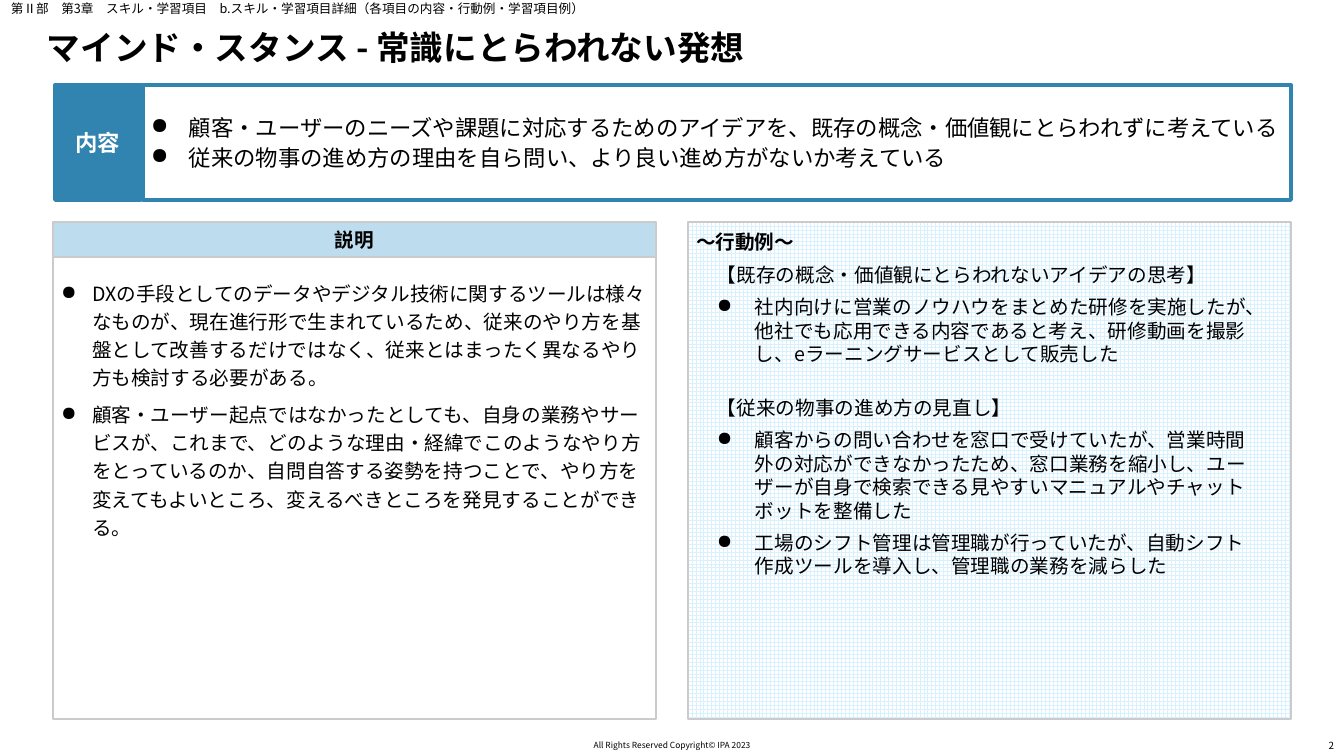
from lxml import etree
from pptx import Presentation
from pptx.dml.color import RGBColor
from pptx.enum.dml import MSO_PATTERN
from pptx.enum.shapes import MSO_SHAPE
from pptx.enum.text import MSO_ANCHOR, PP_ALIGN
from pptx.oxml.ns import qn
from pptx.util import Pt

RECT = MSO_SHAPE.RECTANGLE
GRID = MSO_PATTERN.LARGE_GRID
TOP, MID, LOW = MSO_ANCHOR.TOP, MSO_ANCHOR.MIDDLE, MSO_ANCHOR.BOTTOM
LEFT, MID_X, RIGHT = PP_ALIGN.LEFT, PP_ALIGN.CENTER, PP_ALIGN.RIGHT

FONT = "Noto Sans CJK JP"
BLUE, PALE, GRAY, ICE = "3084AF", "BDDCED", "CBCBCB", "D9F1FF"
BLACK, WHITE = "000000", "FFFFFF"

CHAPTER = "第Ⅱ部　第3章　スキル・学習項目　b.スキル・学習項目詳細（各項目の内容・行動例・学習項目例）"
TITLE = "マインド・スタンス - 常識にとらわれない発想"
CONTENT = [
    "顧客・ユーザーのニーズや課題に対応するためのアイデアを、既存の概念・価値観にとらわれずに考えている",
    "従来の物事の進め方の理由を自ら問い、より良い進め方がないか考えている",
]
REASONS = [
    "DXの手段としてのデータやデジタル技術に関するツールは様々なものが、現在進行形で生まれているため、"
    "従来のやり方を基盤として改善するだけではなく、従来とはまったく異なるやり方も検討する必要がある。",
    "顧客・ユーザー起点ではなかったとしても、自身の業務やサービスが、これまで、どのような理由・経緯で"
    "このようなやり方をとっているのか、自問自答する姿勢を持つことで、やり方を変えてもよいところ、"
    "変えるべきところを発見することができる。",
]
ACTIONS = [
    ("【既存の概念・価値観にとらわれないアイデアの思考】", [
        "社内向けに営業のノウハウをまとめた研修を実施したが、他社でも応用できる内容であると考え、"
        "研修動画を撮影し、eラーニングサービスとして販売した",
    ]),
    ("【従来の物事の進め方の見直し】", [
        "顧客からの問い合わせを窓口で受けていたが、営業時間外の対応ができなかったため、窓口業務を縮小し、"
        "ユーザーが自身で検索できる見やすいマニュアルやチャットボットを整備した",
        "工場のシフト管理は管理職が行っていたが、自動シフト作成ツールを導入し、管理職の業務を減らした",
    ]),
]
NOTICE, PAGE = "All Rights Reserved Copyright© IPA 2023", "2"

WIDE, HIGH = 1344, 756
SCALE = 914400 / 100.8


def px(n):
    return round(n * SCALE)


def color(code):
    return RGBColor.from_string(code)


def style(para, size, ink=BLACK, bold=False, align=LEFT, before=0, line=None, hang=0):
    """Format one paragraph; hang is the bullet indent in px, 0 for no bullet."""
    props = para._p.get_or_add_pPr()
    if hang:
        props.set("marL", str(px(hang)))
        props.set("indent", str(-px(hang)))
        etree.SubElement(props, qn("a:buChar")).set("char", "●")
    para.alignment = align
    para.space_before = Pt(before)
    if line:
        para.line_spacing = line
    font = para.font
    font.size, font.bold, font.name = Pt(size), bold, FONT
    font.color.rgb = color(ink)
    etree.SubElement(font._element, qn("a:ea")).set("typeface", FONT)


def write(shape, lines, size, anchor=TOP, pad=(0, 0, 0, 0), gap=0, **look):
    """Fill a shape with lines, each a text or a (text, own look) pair."""
    frame = shape.text_frame
    frame.word_wrap = True
    frame.vertical_anchor = anchor
    (frame.margin_left, frame.margin_top,
     frame.margin_right, frame.margin_bottom) = map(px, pad)
    for i, item in enumerate(lines):
        text, own = (item, {}) if isinstance(item, str) else item
        para = frame.paragraphs[0] if i == 0 else frame.add_paragraph()
        para.text = text
        style(para, size, **{"before": gap if i else 0, **look, **own})


def panel(slide, box, edge, weight, fill=None):
    shape = slide.shapes.add_shape(RECT, *map(px, box))
    shape.shadow.inherit = False
    shape.line.color.rgb = color(edge)
    shape.line.width = Pt(weight)
    if fill:
        shape.fill.solid()
        shape.fill.fore_color.rgb = color(fill)
    else:
        shape.fill.background()
    return shape


def label(slide, box, text, size, anchor, **look):
    shape = slide.shapes.add_textbox(*map(px, box))
    write(shape, [text], size, anchor, (10, 5, 10, 5), **look)


def main():
    deck = Presentation()
    deck.slide_width, deck.slide_height = px(WIDE), px(HIGH)
    slide = deck.slides.add_slide(deck.slide_layouts[6])

    label(slide, (527, 724, 290, 31), NOTICE, 6, LOW, align=MID_X)
    label(slide, (1151, 731, 193, 25), PAGE, 7, LOW, align=RIGHT)
    label(slide, (37, 17, 1270, 60), TITLE, 24, MID, bold=True)
    label(slide, (1, 0, 1270, 17), CHAPTER, 9, MID)

    wide, top, head = 603, 222, 35
    left, right, base = 53, 688, 719
    grid = panel(slide, (right, top, wide, base - top), GRAY, 1)
    grid.fill.patterned()
    grid.fill.pattern = GRID
    grid.fill.fore_color.rgb = color(ICE)
    grid.fill.back_color.rgb = color(WHITE)
    write(grid, ["～行動例～"], 14, pad=(8, 8, 8, 8), bold=True)

    tag = panel(slide, (55, 85, 86, 115), BLUE, 2.75, BLUE)
    write(tag, ["内容"], 16, MID, ink=WHITE, bold=True, align=MID_X)
    body = panel(slide, (143, 85, 1148, 115), BLUE, 2.75)
    write(body, CONTENT, 16, MID, (8, 0, 8, 0), gap=2, hang=38)

    bar = panel(slide, (left, top, wide, head), GRAY, 1, PALE)
    write(bar, ["説明"], 14, MID, bold=True, align=MID_X)
    text = panel(slide, (left, top + head, wide, base - top - head), GRAY, 1)
    write(text, REASONS, 14, pad=(8, 20, 8, 0), gap=6, line=1.2, hang=31)

    lines = []
    for name, deeds in ACTIONS:
        lines.append((name, {"before": 22 if lines else 0}))
        lines += [(deed, {"hang": 38}) for deed in deeds]
    deeds_box = slide.shapes.add_textbox(*map(px, (717, 263, 546, 328)))
    write(deeds_box, lines, 14, gap=6)

    deck.save("out.pptx")


if __name__ == "__main__":
    main()
